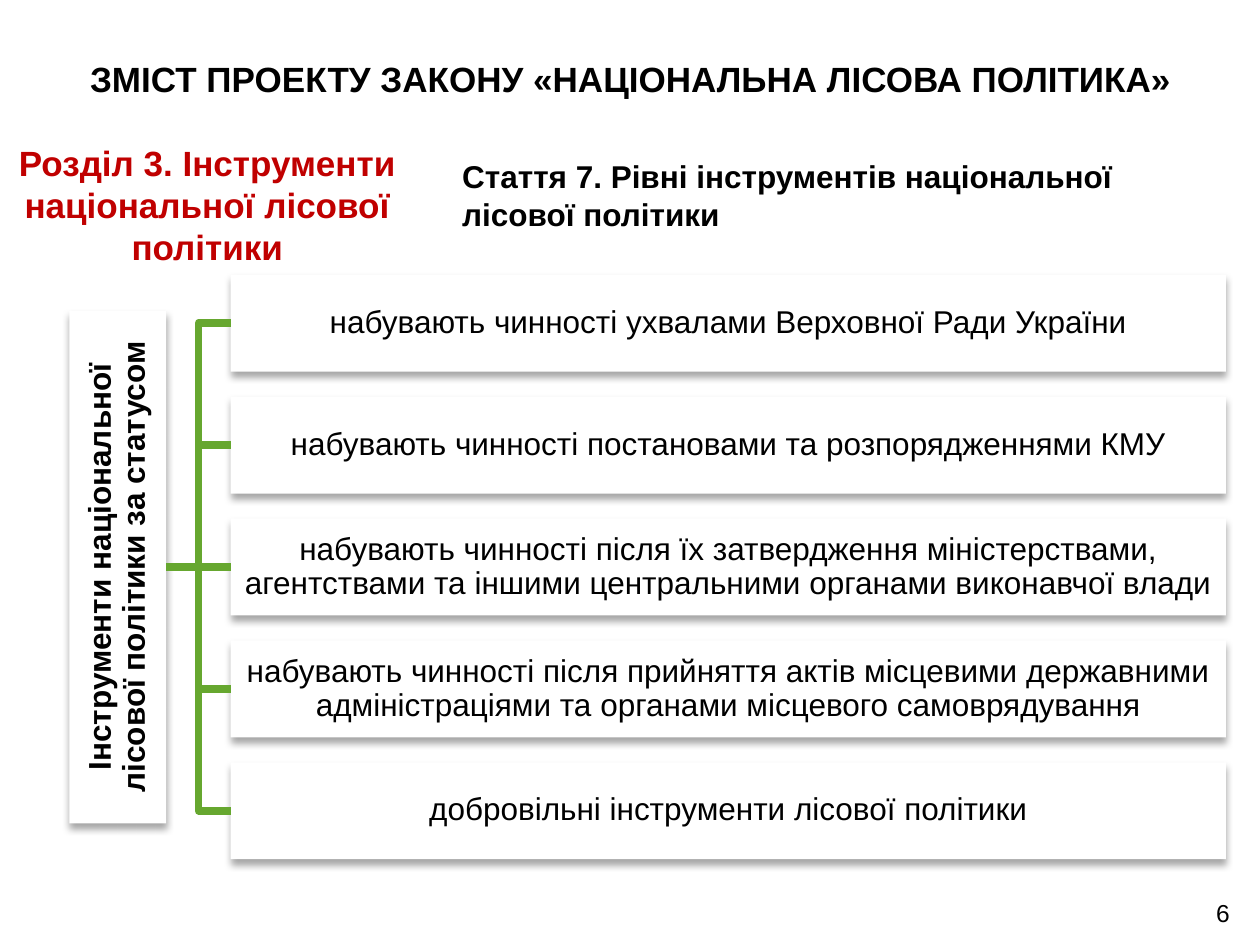
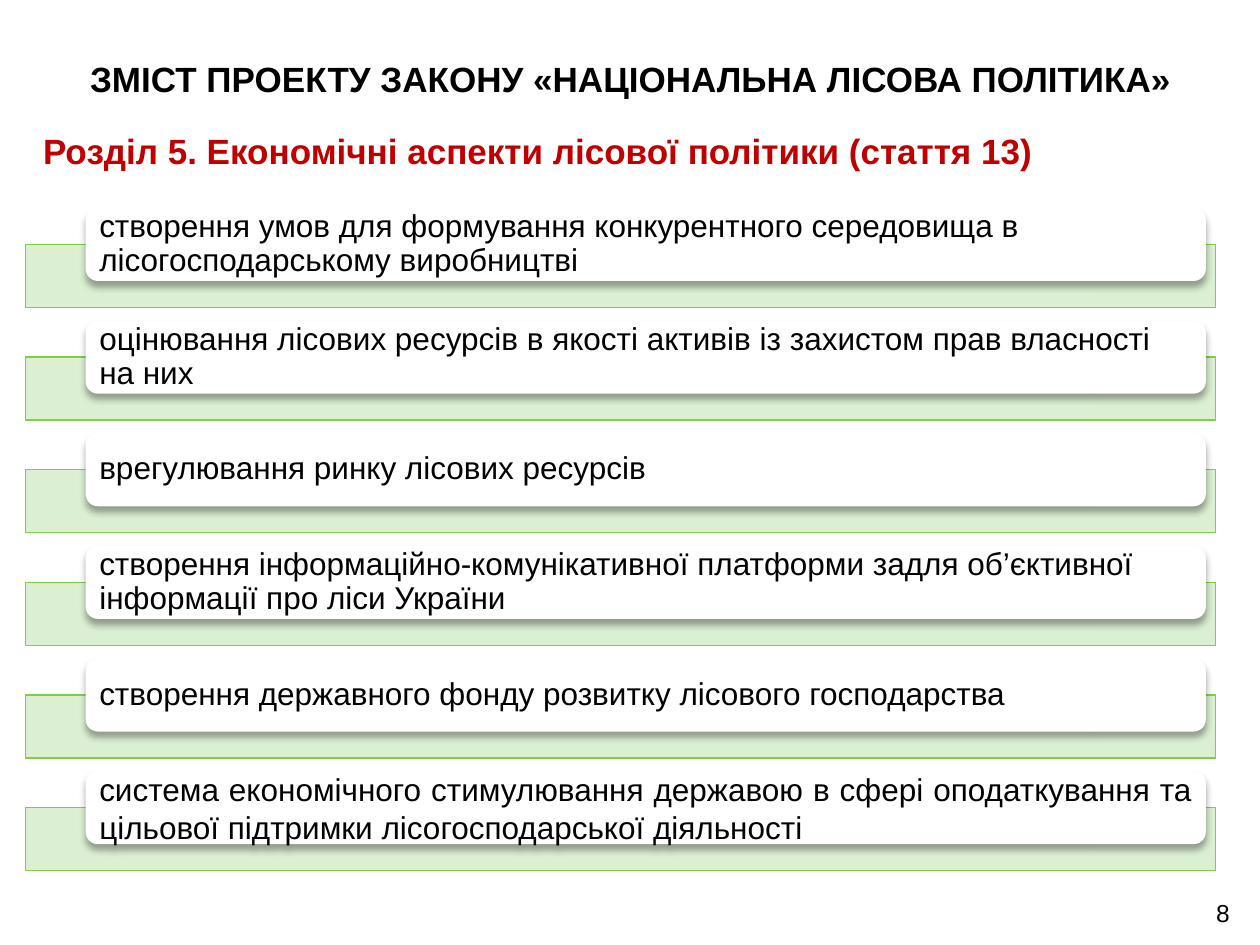
from lxml import etree
from pptx import Presentation
from pptx.dml.color import RGBColor
from pptx.enum import shapes, text
from pptx.oxml import ns
from pptx.util import Inches, Pt

BLACK = RGBColor(0x00, 0x00, 0x00)
WHITE = RGBColor(0xFF, 0xFF, 0xFF)
RED = RGBColor(0xC0, 0x00, 0x00)
BRANCH_GREEN = RGBColor(0x66, 0xA7, 0x2F)
BAND_GREEN = RGBColor(0xD8, 0xEE, 0xCE)
BAND_EDGE = RGBColor(0x7F, 0xD1, 0x3B)

TITLE = "ЗМІСТ ПРОЕКТУ ЗАКОНУ «НАЦІОНАЛЬНА ЛІСОВА ПОЛІТИКА»"
LEFT, CENTER = text.PP_ALIGN.LEFT, text.PP_ALIGN.CENTER
RIGHT, JUSTIFY = text.PP_ALIGN.RIGHT, text.PP_ALIGN.JUSTIFY
TOP, MIDDLE, BOTTOM = text.MSO_ANCHOR.TOP, text.MSO_ANCHOR.MIDDLE, text.MSO_ANCHOR.BOTTOM
RECTANGLE = shapes.MSO_SHAPE.RECTANGLE
ROUNDED = shapes.MSO_SHAPE.ROUNDED_RECTANGLE

BODY = {"name": "Arial", "size": Pt(18), "bold": False}
STRONG = {**BODY, "bold": True}
HEADING = {**STRONG, "size": Pt(20)}
PAGE_NUMBER = {**BODY, "size": Pt(14)}

STATUS_ROOT = "Інструменти національної лісової політики за статусом"
STATUS_LEVELS = [
    "набувають чинності ухвалами Верховної Ради України",
    "набувають чинності постановами та розпорядженнями КМУ",
    "набувають чинності після їх затвердження міністерствами, "
    "агентствами та іншими центральними органами виконавчої влади",
    "набувають чинності після прийняття актів місцевими державними "
    "адміністраціями та органами місцевого самоврядування",
    "добровільні інструменти лісової політики",
]
ECONOMIC_ASPECTS = [
    "створення умов для формування конкурентного середовища в "
    "лісогосподарському виробництві",
    "оцінювання лісових ресурсів в якості активів із захистом прав власності на них",
    "врегулювання ринку лісових ресурсів",
    "створення інформаційно-комунікативної платформи задля об’єктивної "
    "інформації про ліси України",
    "створення державного фонду розвитку лісового господарства",
    "система економічного стимулювання державою в сфері оподаткування та "
    "цільової підтримки лісогосподарської діяльності",
]


def inches(*values):
    return [Inches(value) for value in values]


def set_attributes(target, values):
    for name, value in values.items():
        setattr(target, name, value)


def write(shape, content, style, color=BLACK, align=LEFT, anchor=TOP,
          margins=(0.1, 0.05), spacing=1.0):
    """Fill a shape with one formatted paragraph; margins are (sides, top and bottom)."""
    side, edge = inches(*margins)
    frame = shape.text_frame
    set_attributes(frame, {
        "word_wrap": True, "auto_size": text.MSO_AUTO_SIZE.NONE,
        "vertical_anchor": anchor, "margin_left": side, "margin_right": side,
        "margin_top": edge, "margin_bottom": edge,
    })
    paragraph = frame.paragraphs[0]
    set_attributes(paragraph, {"alignment": align, "line_spacing": spacing})
    run = paragraph.add_run()
    run.text = content
    set_attributes(run.font, style)
    run.font.color.rgb = color


def add_text(slide, box, content, style, **options):
    write(slide.shapes.add_textbox(*inches(*box)), content, style, **options)


def add_effects(shape):
    return etree.SubElement(shape._element.spPr, ns.qn("a:effectLst"))


def add_card(slide, kind, box):
    """White borderless card with a soft shadow below it."""
    card = slide.shapes.add_shape(kind, *inches(*box))
    card.fill.solid()
    card.fill.fore_color.rgb = WHITE
    card.line.fill.background()
    shadow = etree.SubElement(
        add_effects(card), ns.qn("a:outerShdw"), blurRad=str(Pt(4)),
        dist=str(Pt(3)), dir="5400000", rotWithShape="0")
    color = etree.SubElement(shadow, ns.qn("a:srgbClr"), val=str(BLACK))
    etree.SubElement(color, ns.qn("a:alpha"), val="35000")
    return card


def add_band(slide, box):
    band = slide.shapes.add_shape(RECTANGLE, *inches(*box))
    band.shadow.inherit = False
    band.fill.solid()
    band.fill.fore_color.rgb = BAND_GREEN
    color = band._element.spPr.find(ns.qn("a:solidFill"))[0]
    etree.SubElement(color, ns.qn("a:alpha"), val="90000")
    band.line.color.rgb = BAND_EDGE
    band.line.width = Pt(0.75)


def style_branch(branch):
    branch.line.color.rgb = BRANCH_GREEN
    branch.line.width = Pt(4.33)


def add_branch(slide, root, level):
    """Join the right side of the root to the left side of a level."""
    start_x, start_y = root.left + root.width, root.top + root.height // 2
    end_x, end_y = level.left, level.top + level.height // 2
    if abs(end_y - start_y) < Inches(0.02):
        branch = slide.shapes.add_connector(
            shapes.MSO_CONNECTOR.STRAIGHT, start_x, start_y, end_x, end_y)
        branch.begin_connect(root, 3)
        branch.end_connect(level, 1)
        add_effects(branch)
    else:
        middle_x = (start_x + end_x) // 2
        builder = slide.shapes.build_freeform(start_x, start_y)
        builder.add_line_segments(
            [(middle_x, start_y), (middle_x, end_y), (end_x, end_y)], close=False)
        branch = builder.convert_to_shape()
        branch.fill.background()
        branch.shadow.inherit = False
    style_branch(branch)


def add_status_tree(slide, box):
    left, top, width, height = box
    card_height, root_height, indent = 0.77, 4.07, 1.28
    pitch = (height - card_height) / (len(STATUS_LEVELS) - 1)
    options = {"align": CENTER, "anchor": MIDDLE, "margins": (0.01, 0.01), "spacing": 0.9}

    root = add_card(slide, RECTANGLE,
                    (left, top + (height - root_height) / 2, card_height, root_height))
    write(root, STATUS_ROOT, STRONG, **options)
    root.text_frame._txBody.bodyPr.set("vert", "vert270")
    for index, content in enumerate(STATUS_LEVELS):
        level = add_card(slide, RECTANGLE, (left + indent, top + index * pitch,
                                            width - indent, card_height))
        write(level, content, BODY, **options)
        add_branch(slide, root, level)


def add_aspect_list(slide, box):
    left, top, width, height = box
    band_offset, band_height = 0.29, 0.5
    last = len(ECONOMIC_ASPECTS) - 1
    pitch = (height - band_offset - band_height) / last
    for index, content in enumerate(ECONOMIC_ASPECTS):
        row_top = top + index * pitch
        add_band(slide, (left, row_top + band_offset, width, band_height))
        card = add_card(slide, ROUNDED, (left + 0.48, row_top, width - 0.56, 0.58))
        align, spacing = (JUSTIFY, 1.0) if index == last else (LEFT, 0.9)
        write(card, content, BODY, align=align, anchor=MIDDLE,
              margins=(0.08, 0), spacing=spacing)


def add_titled_slide(presentation, number):
    slide = presentation.slides.add_slide(presentation.slide_layouts[5])
    title = slide.shapes.title
    title.left, title.top, title.width, title.height = inches(0.28, 0, 9.45, 1.25)
    write(title, TITLE, HEADING, align=CENTER, anchor=MIDDLE)
    add_text(slide, (9.46, 7.01, 0.4, 0.4), str(number), PAGE_NUMBER,
             align=RIGHT, anchor=BOTTOM)
    return slide


def build_instruments_slide(presentation):
    slide = add_titled_slide(presentation, 6)
    add_text(slide, (0, 1.07, 3.29, 1.11),
             "Розділ 3. Інструменти національної лісової політики",
             HEADING, color=RED, align=CENTER)
    add_text(slide, (3.57, 1.2, 6.21, 0.71),
             "Стаття 7. Рівні інструментів національної лісової політики", STRONG)
    add_status_tree(slide, (0.55, 2.18, 9.18, 4.64))


def build_economics_slide(presentation):
    slide = add_titled_slide(presentation, 8)
    add_text(slide, (0, 0.98, 8.54, 0.44),
             "Розділ 5. Економічні аспекти лісової політики (стаття 13)",
             HEADING, color=RED, align=CENTER)
    add_aspect_list(slide, (0.2, 1.65, 9.45, 5.26))


def main():
    presentation = Presentation()
    presentation.slide_width, presentation.slide_height = inches(10, 7.5)
    build_instruments_slide(presentation)
    build_economics_slide(presentation)
    presentation.save("out.pptx")


if __name__ == "__main__":
    main()
